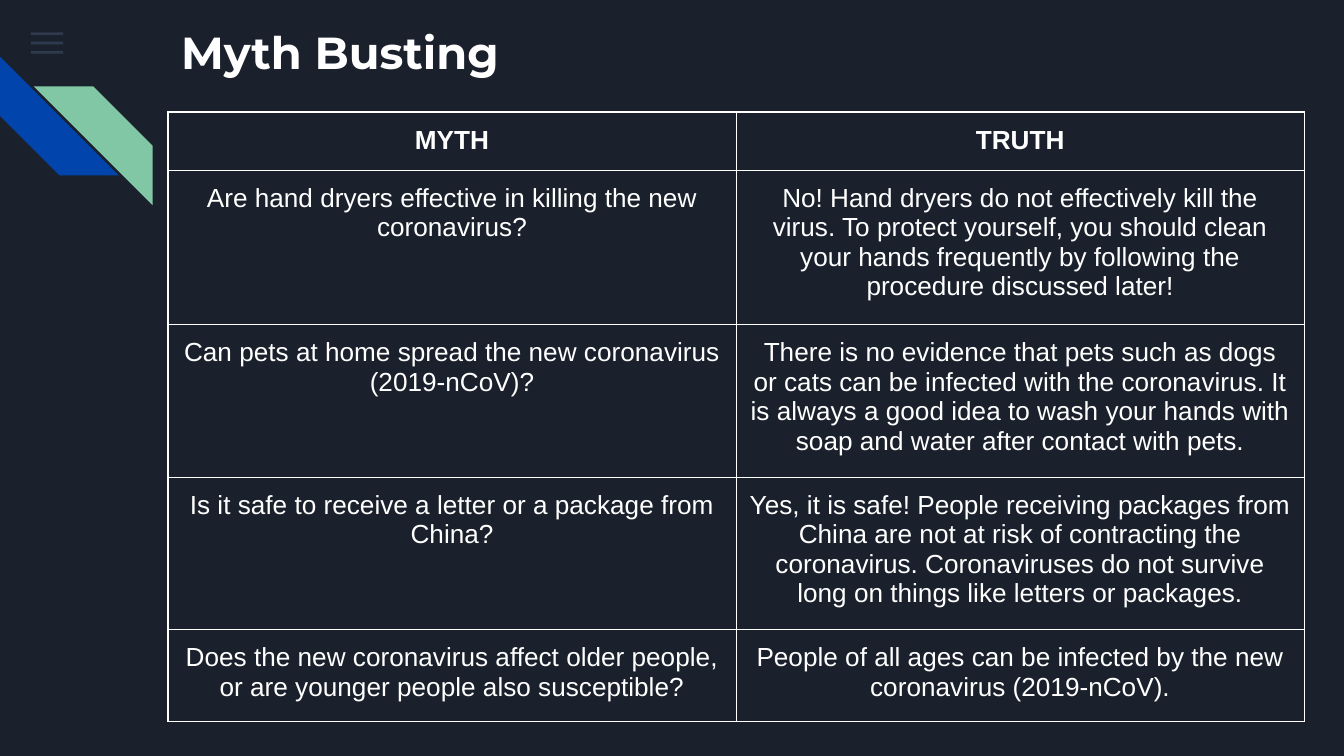
from lxml import etree
from pptx import Presentation
from pptx.dml.color import RGBColor
from pptx.enum.shapes import MSO_SHAPE
from pptx.enum.text import MSO_ANCHOR, PP_ALIGN
from pptx.oxml.ns import qn
from pptx.util import Inches, Pt

BAR, STRIPE = MSO_SHAPE.RECTANGLE, MSO_SHAPE.DIAGONAL_STRIPE
TOP, CENTER = MSO_ANCHOR.TOP, PP_ALIGN.CENTER

COLORS = {
    "background": "1B212C",
    "menu": "55688B",
    "blue": "0145AC",
    "green": "82C7A5",
    "white": "FFFFFF",
}
INSETS = {f"margin_{side}": Inches(0.1) for side in ("left", "right", "top", "bottom")}

# A 16:9 slide on a square grid of 40 columns and 22.5 rows
deck = Presentation()
deck.slide_width = Inches(10)
deck.slide_height = deck.slide_width * 9 // 16
UNIT = deck.slide_width / 40
page = deck.slides.add_slide(deck.slide_layouts[6])
page.background.fill.solid()
page.background.fill.fore_color.rgb = RGBColor.from_string(COLORS["background"])


def grid(*counts):
    return [round(count * UNIT) for count in counts]


def add_filled(kind, place, color):
    shape = page.shapes.add_shape(kind, *grid(*place))
    shape.shadow.inherit = False
    shape.fill.solid()
    shape.fill.fore_color.rgb = RGBColor.from_string(COLORS[color])
    shape.line.fill.background()
    return shape


# Menu icon: three translucent bars
for index in range(3):
    bar = add_filled(BAR, (0.92, 0.96 + 0.28 * index, 0.96, 0.08), "menu")
    tint = bar.element.spPr.find(qn("a:solidFill"))[0]
    etree.SubElement(tint, qn("a:alpha"), val="36000")

# Corner stripes
for left, top, turn, color in ((0, 1.68, 270, "blue"), (1, 2.57, 90, "green")):
    stripe = add_filled(STRIPE, (left, top, 3.54, 3.54), color)
    stripe.rotation = turn

# Title
title = page.shapes.add_textbox(*grid(5, 0.34, 30.8, 4))
frame = title.text_frame
for name, value in {**INSETS, "word_wrap": True, "vertical_anchor": TOP}.items():
    setattr(frame, name, value)
span = frame.paragraphs[0].add_run()
span.text = "Myth Busting"
for name, value in {"name": "Montserrat", "size": Pt(24), "bold": True}.items():
    setattr(span.font, name, value)
span.font.color.rgb = RGBColor.from_string(COLORS["white"])

# Myth and truth table
ROWS = [
    ("MYTH", "TRUTH"),
    ("Are hand dryers effective in killing the new coronavirus?",
     "No! Hand dryers do not effectively kill the virus. To protect yourself, you should "
     "clean your hands frequently by following the procedure discussed later!"),
    ("Can pets at home spread the new coronavirus (2019-nCoV)?",
     "There is no evidence that pets such as dogs or cats can be infected with the "
     "coronavirus. It is always a good idea to wash your hands with soap and water after "
     "contact with pets."),
    ("Is it safe to receive a letter or a package from China?",
     "Yes, it is safe! People receiving packages from China are not at risk of contracting "
     "the coronavirus. Coronaviruses do not survive long on things like letters or packages."),
    ("Does the new coronavirus affect older people, or are younger people also susceptible?",
     "People of all ages can be infected by the new coronavirus (2019-nCoV)."),
]
HEIGHTS = grid(1.44, 4.6, 4.52, 4.28, 2.74)

holder = page.shapes.add_table(len(ROWS), 2, *grid(5, 3.33, 33.82, 13.12))
table = holder.table
table.first_row = table.horz_banding = False

for row_index, (texts, height) in enumerate(zip(ROWS, HEIGHTS)):
    table.rows[row_index].height = height
    for column_index, text in enumerate(texts):
        cell = table.cell(row_index, column_index)
        for name, value in {**INSETS, "vertical_anchor": TOP}.items():
            setattr(cell, name, value)
        cell.fill.background()

        para = cell.text_frame.paragraphs[0]
        para.alignment = CENTER
        span = para.add_run()
        span.text = text
        look = {"name": "Arial", "size": Pt(14), "bold": row_index == 0}
        for name, value in look.items():
            setattr(span.font, name, value)
        span.font.color.rgb = RGBColor.from_string(COLORS["white"])

        # Borders come before the fill in the cell properties
        properties = cell._tc.get_or_add_tcPr()
        for position, side in enumerate("LRTB"):
            border = etree.Element(qn(f"a:ln{side}"), w=str(Pt(0.75)))
            paint = etree.SubElement(border, qn("a:solidFill"))
            etree.SubElement(paint, qn("a:srgbClr"), val=COLORS["white"])
            properties.insert(position, border)

# Rows grow with their text from this smaller frame
holder.height = grid(13.12)[0]

deck.save("out.pptx")
